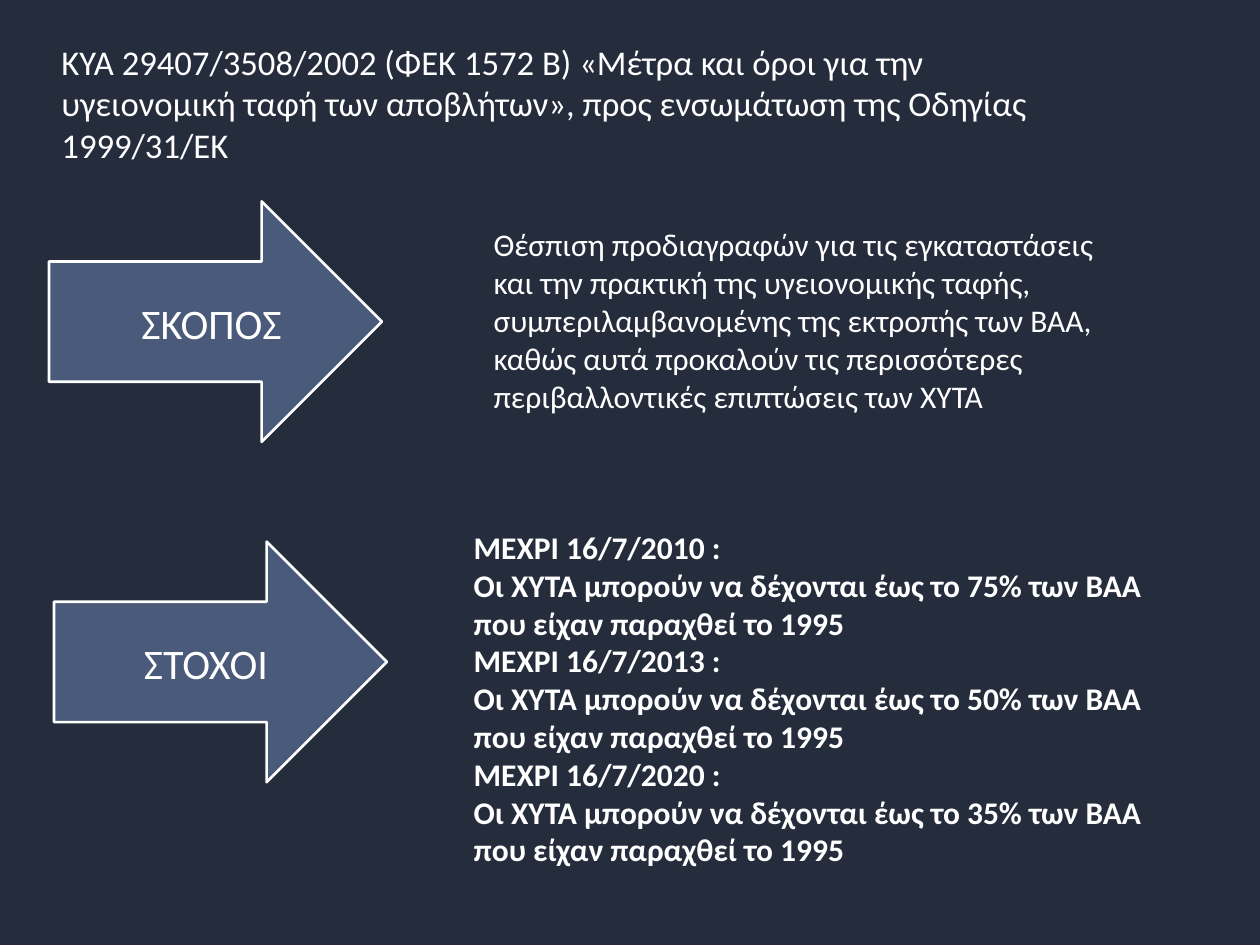
from pptx import Presentation
from pptx.dml.color import RGBColor
from pptx.enum.shapes import MSO_SHAPE
from pptx.enum.text import MSO_ANCHOR, PP_ALIGN
from pptx.util import Cm, Pt

RIGHT_ARROW = MSO_SHAPE.RIGHT_ARROW
TOP, MIDDLE = MSO_ANCHOR.TOP, MSO_ANCHOR.MIDDLE
LEFT, CENTER = PP_ALIGN.LEFT, PP_ALIGN.CENTER
COLORS = {"background": "252D3D", "arrow": "4A5A7A", "white": "FFFFFF"}


def color(name):
    return RGBColor.from_string(COLORS[name])


def add_text(text, box, size=18, bold=False, align=LEFT, anchor=TOP):
    shape = slide.shapes.add_textbox(*map(Cm, box))
    frame = shape.text_frame
    frame.word_wrap = True
    frame.vertical_anchor = anchor
    frame.text = text
    for paragraph in frame.paragraphs:
        paragraph.alignment = align
        font = paragraph.font
        font.name = "Calibri"
        font.size = Pt(size)
        font.bold = bold
        font.color.rgb = color("white")


presentation = Presentation()
presentation.slide_width = Cm(25.4)
presentation.slide_height = Cm(19.05)
slide = presentation.slides.add_slide(presentation.slide_layouts[6])
slide.background.fill.solid()
slide.background.fill.fore_color.rgb = color("background")

add_text(
    "ΚΥΑ 29407/3508/2002 (ΦΕΚ 1572 B) «Μέτρα και όροι για την "
    "υγειονομική ταφή των αποβλήτων», προς ενσωμάτωση της Οδηγίας 1999/31/ΕΚ",
    box=(0.99, 0.69, 21.34, 3), size=19.8)

for left, top in [(0.99, 4.06), (1.09, 10.92)]:
    arrow = slide.shapes.add_shape(RIGHT_ARROW, Cm(left), Cm(top), Cm(6.71), Cm(4.85))
    arrow.shadow.inherit = False
    arrow.fill.solid()
    arrow.fill.fore_color.rgb = color("arrow")
    arrow.line.color.rgb = color("white")
    arrow.line.width = Pt(1.5)

add_text("ΣΚΟΠΟΣ", box=(1.52, 4.6, 5.49, 3.81), size=24, align=CENTER, anchor=MIDDLE)
add_text("ΣΤΟΧΟΙ", box=(1.95, 12.73, 4.4, 1.27), size=24, align=CENTER, anchor=MIDDLE)

add_text(
    "Θέσπιση προδιαγραφών για τις εγκαταστάσεις και την πρακτική της "
    "υγειονομικής ταφής, συμπεριλαμβανομένης της εκτροπής των ΒΑΑ, καθώς αυτά "
    "προκαλούν τις περισσότερες περιβαλλοντικές επιπτώσεις των ΧΥΤΑ",
    box=(9.7, 4.42, 13.21, 4.11))

targets = [(2010, 75), (2013, 50), (2020, 35)]
add_text(
    "\n".join(
        f"ΜΕΧΡΙ 16/7/{year} :\n"
        f"Οι ΧΥΤΑ μπορούν να δέχονται έως το {share}% των ΒΑΑ που είχαν παραχθεί το 1995"
        for year, share in targets),
    box=(9.3, 10.52, 14.81, 7.19), bold=True)

presentation.save("out.pptx")
